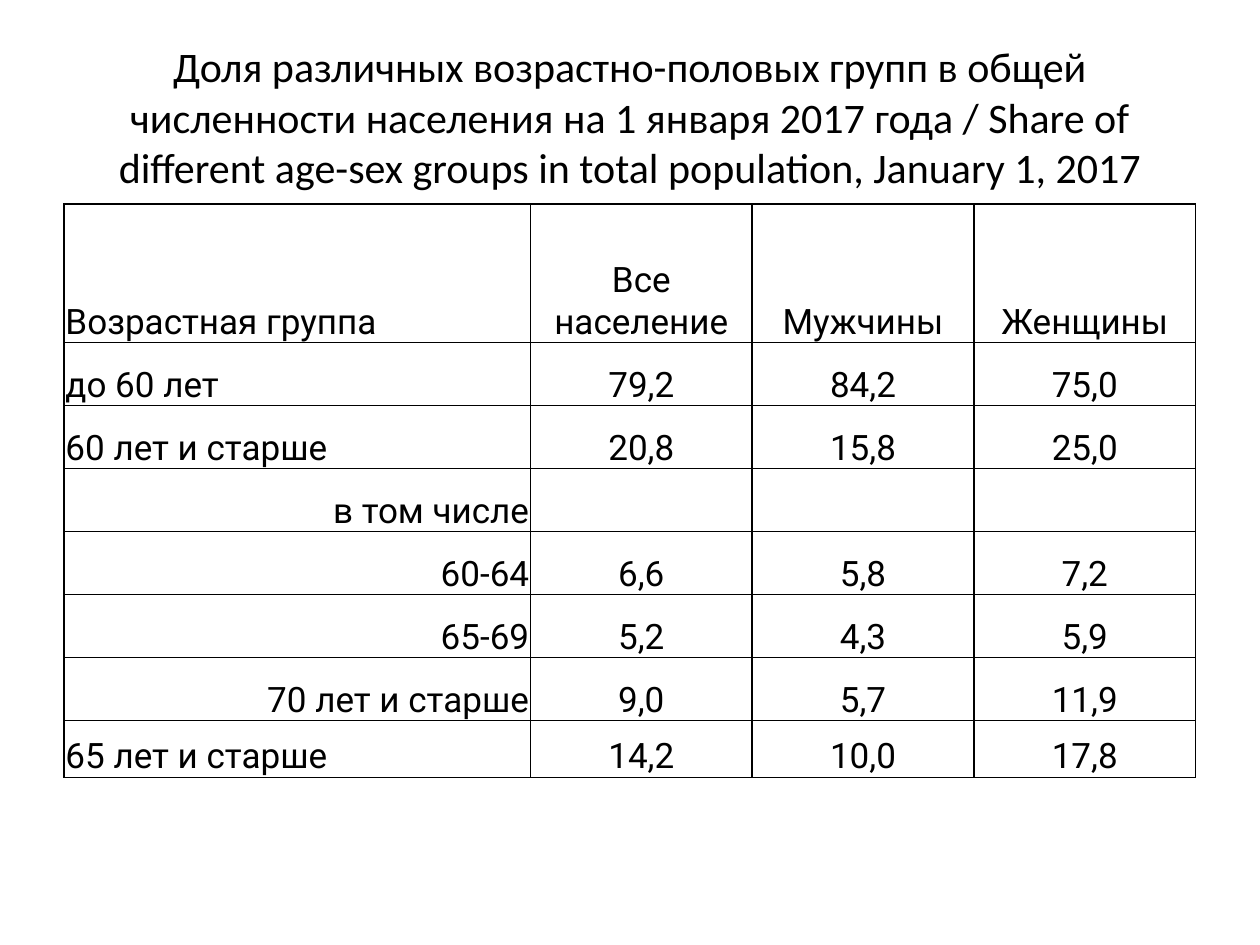
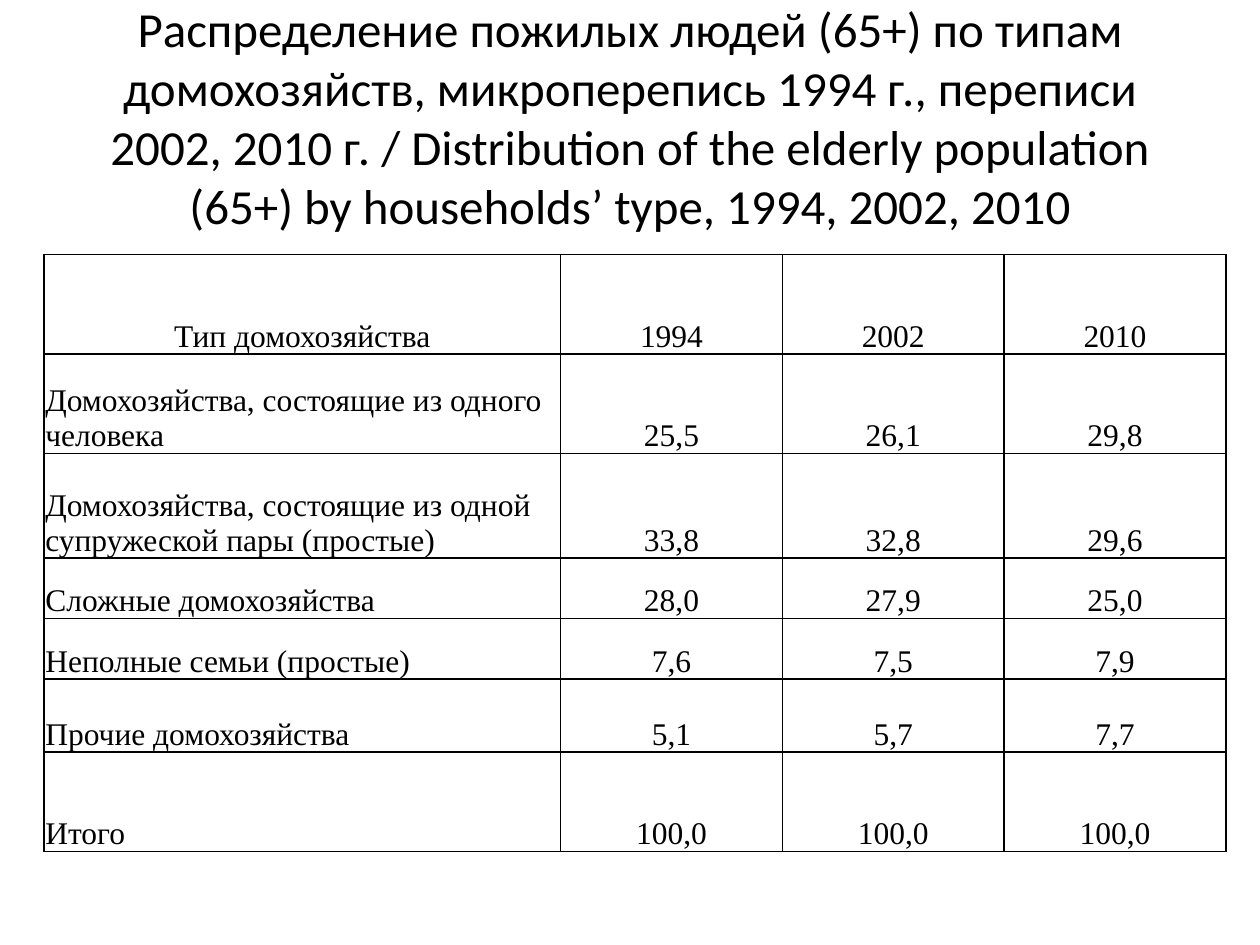
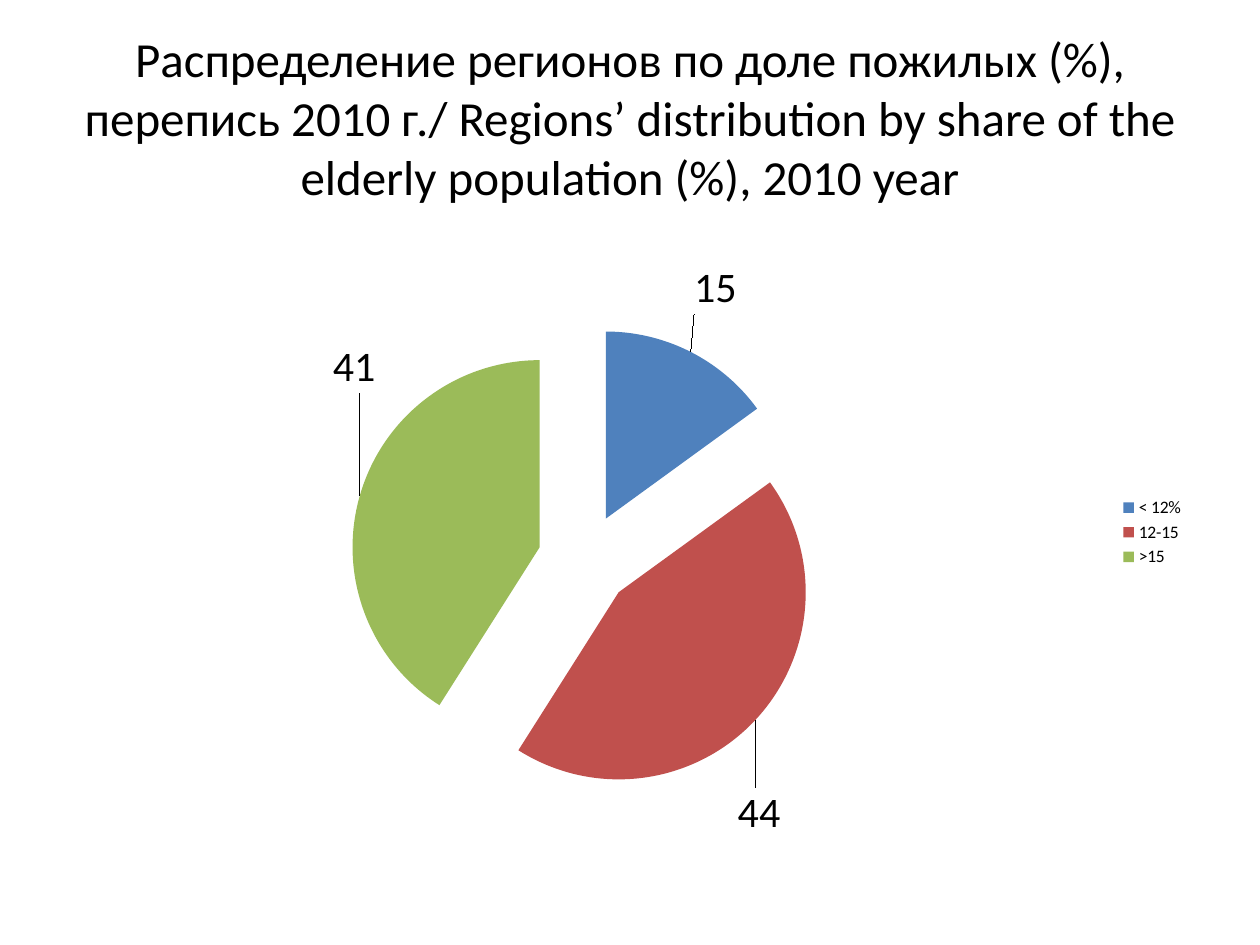
from lxml import etree
from pptx import Presentation
from pptx.chart.data import CategoryChartData
from pptx.dml.color import RGBColor
from pptx.enum.chart import XL_CHART_TYPE, XL_LABEL_POSITION, XL_LEGEND_POSITION
from pptx.enum.text import MSO_ANCHOR, PP_ALIGN
from pptx.oxml import parse_xml
from pptx.oxml.ns import nsdecls, qn
from pptx.util import Inches, Pt

BLACK = "000000"
TITLE_FONT = "Calibri"
LEFT, CENTER, RIGHT = PP_ALIGN.LEFT, PP_ALIGN.CENTER, PP_ALIGN.RIGHT

AGE_GROUPS = [
    ["Возрастная группа", "Все население", "Мужчины", "Женщины"],
    ["до 60 лет", "79,2", "84,2", "75,0"],
    ["60 лет и старше", "20,8", "15,8", "25,0"],
    ["в том числе", "", "", ""],
    ["60-64", "6,6", "5,8", "7,2"],
    ["65-69", "5,2", "4,3", "5,9"],
    ["70 лет и старше", "9,0", "5,7", "11,9"],
    ["65 лет и старше", "14,2", "10,0", "17,8"],
]

HOUSEHOLDS = [
    ["Тип домохозяйства", "1994", "2002", "2010"],
    ["Домохозяйства, состоящие из одного человека", "25,5", "26,1", "29,8"],
    ["Домохозяйства, состоящие из одной супружеской пары (простые)", "33,8", "32,8", "29,6"],
    ["Cложные домохозяйства", "28,0", "27,9", "25,0"],
    ["Неполные семьи (простые)", "7,6", "7,5", "7,9"],
    ["Прочие домохозяйства", "5,1", "5,7", "7,7"],
    ["Итого", "100,0", "100,0", "100,0"],
]

REGION_SHARES = [
    ("< 12%", 15, "4F81BD", (0, -0.05)),
    ("12-15", 44, "C0504D", (-0.02, 0.1)),
    (">15", 41, "9BBB59", (0.02, -0.16)),
]


def rgb(value):
    """Turn a hex string into a colour."""
    return RGBColor.from_string(value)


def style_font(font, size, name=TITLE_FONT, color=BLACK):
    """Set the size, typeface and colour of a font."""
    font.size = Pt(size)
    font.name = name
    font.color.rgb = rgb(color)


def write(frame, text, align=LEFT, **font_format):
    """Put one formatted paragraph into a text frame."""
    paragraph = frame.paragraphs[0]
    paragraph.alignment = align
    if text:
        run = paragraph.add_run()
        run.text = text
        style_font(run.font, **font_format)


def add_title(slide, text, size=28):
    """Add the centred heading of a slide."""
    heading = slide.shapes.add_textbox(Inches(0.5), Inches(0.3), Inches(9), Inches(1.25))
    frame = heading.text_frame
    frame.word_wrap = True
    frame.vertical_anchor = MSO_ANCHOR.MIDDLE
    write(frame, text, align=CENTER, size=size)


def add_borders(cell, color=BLACK, width=1):
    """Draw a solid line on each side of a cell."""
    properties = cell._tc.get_or_add_tcPr()
    for side in ("lnL", "lnR", "lnT", "lnB"):
        line = etree.SubElement(properties, qn(f"a:{side}"), w=str(Pt(width)))
        fill = etree.SubElement(line, qn("a:solidFill"))
        etree.SubElement(fill, qn("a:srgbClr"), val=color)


def add_data_table(slide, rows, left, top, widths, heights, label_aligns, **font_format):
    """Add a ruled table with a label column and centred values."""
    grid = slide.shapes.add_table(
        len(rows), len(widths), Inches(left), Inches(top),
        Inches(sum(widths)), Inches(sum(heights))).table
    for column, width in zip(grid.columns, widths):
        column.width = Inches(width)
    for r, (row, height, label_align) in enumerate(zip(rows, heights, label_aligns)):
        grid.rows[r].height = Inches(height)
        for c, text in enumerate(row):
            cell = grid.cell(r, c)
            cell.margin_left = cell.margin_right = cell.margin_top = Inches(0.01)
            cell.margin_bottom = 0
            cell.vertical_anchor = MSO_ANCHOR.BOTTOM
            add_borders(cell)
            cell.fill.background()
            write(cell.text_frame, text, align=CENTER if c else label_align, **font_format)


def manual_layout(x, y, **extra):
    """Build a chart layout element from fractions of the chart."""
    values = {**extra, "x": x, "y": y}
    order = ("layoutTarget", "xMode", "yMode", "x", "y", "w", "h")
    parts = "".join(f'<c:{key} val="{values[key]}"/>' for key in order if key in values)
    return parse_xml(
        f'<c:layout {nsdecls("c")}><c:manualLayout>{parts}</c:manualLayout></c:layout>')


def add_share_pie(slide, shares):
    """Add the exploded pie with values outside its slices."""
    data = CategoryChartData()
    data.categories = [category for category, *_ in shares]
    data.add_series("Series 1", [value for _, value, *_ in shares])
    pie = slide.shapes.add_chart(
        XL_CHART_TYPE.PIE, Inches(0.5), Inches(1.75), Inches(9), Inches(4.95), data).chart
    style_font(pie.font, 10)
    pie.has_title = False
    pie.has_legend = True
    pie.legend.position = XL_LEGEND_POSITION.RIGHT
    pie.legend.include_in_layout = False
    pie.plots[0].vary_by_categories = True

    series = pie.plots[0].series[0]
    series.data_labels.show_value = True
    style_font(series.data_labels.font, 24)
    for index, (_, _, color, _) in enumerate(shares):
        point = series.points[index]
        point.format.fill.solid()
        point.format.fill.fore_color.rgb = rgb(color)
        style_font(point.data_label.font, 24)
        point.data_label.position = XL_LABEL_POSITION.OUTSIDE_END

    root = pie._chartSpace
    for label, (*_, offset) in zip(root.xpath(".//c:dLbl"), shares):
        label.find(qn("c:idx")).addnext(manual_layout(*offset))
    explosion = parse_xml(f'<c:explosion {nsdecls("c")} val="25"/>')
    root.xpath(".//c:dPt")[0].addprevious(explosion)
    plot_area = root.xpath(".//c:plotArea")[0]
    for layout in plot_area.findall(qn("c:layout")):
        plot_area.remove(layout)
    plot_area.insert(0, manual_layout(
        0.07, 0.17, w=0.78, h=0.75, layoutTarget="inner", xMode="edge", yMode="edge"))


def main():
    """Build the three slides and save them."""
    deck = Presentation()
    deck.slide_width, deck.slide_height = Inches(10), Inches(7.5)
    blank = deck.slide_layouts[6]

    ages = deck.slides.add_slide(blank)
    add_title(ages, "Доля различных возрастно-половых групп в общей численности населения "
              "на 1 января 2017 года / Share of different age-sex groups in total "
              "population, January 1, 2017", size=24)
    add_data_table(ages, AGE_GROUPS, 0.51, 1.62, [3.7] + [1.76] * 3,
                   [1.1] + [0.5] * 6 + [0.45], [LEFT] * 3 + [RIGHT] * 4 + [LEFT],
                   size=20, name="Roboto")

    households = deck.slides.add_slide(blank)
    add_title(households, "Распределение пожилых людей (65+) по типам домохозяйств, "
              "микроперепись 1994 г., переписи 2002, 2010 г. / Distribution of the elderly "
              "population (65+) by households’ type, 1994, 2002, 2010")
    add_data_table(households, HOUSEHOLDS, 0.35, 2.02, [4.1] + [1.76] * 3,
                   [0.79, 0.79, 0.83, 0.48, 0.48, 0.58, 0.79], [CENTER] + [LEFT] * 6,
                   size=18, name="Times New Roman")

    regions = deck.slides.add_slide(blank)
    add_title(regions, "Распределение регионов по доле пожилых (%), перепись 2010 г./ "
              "Regions’ distribution by share of the elderly population (%), 2010 year")
    add_share_pie(regions, REGION_SHARES)

    deck.save("out.pptx")


if __name__ == "__main__":
    main()
